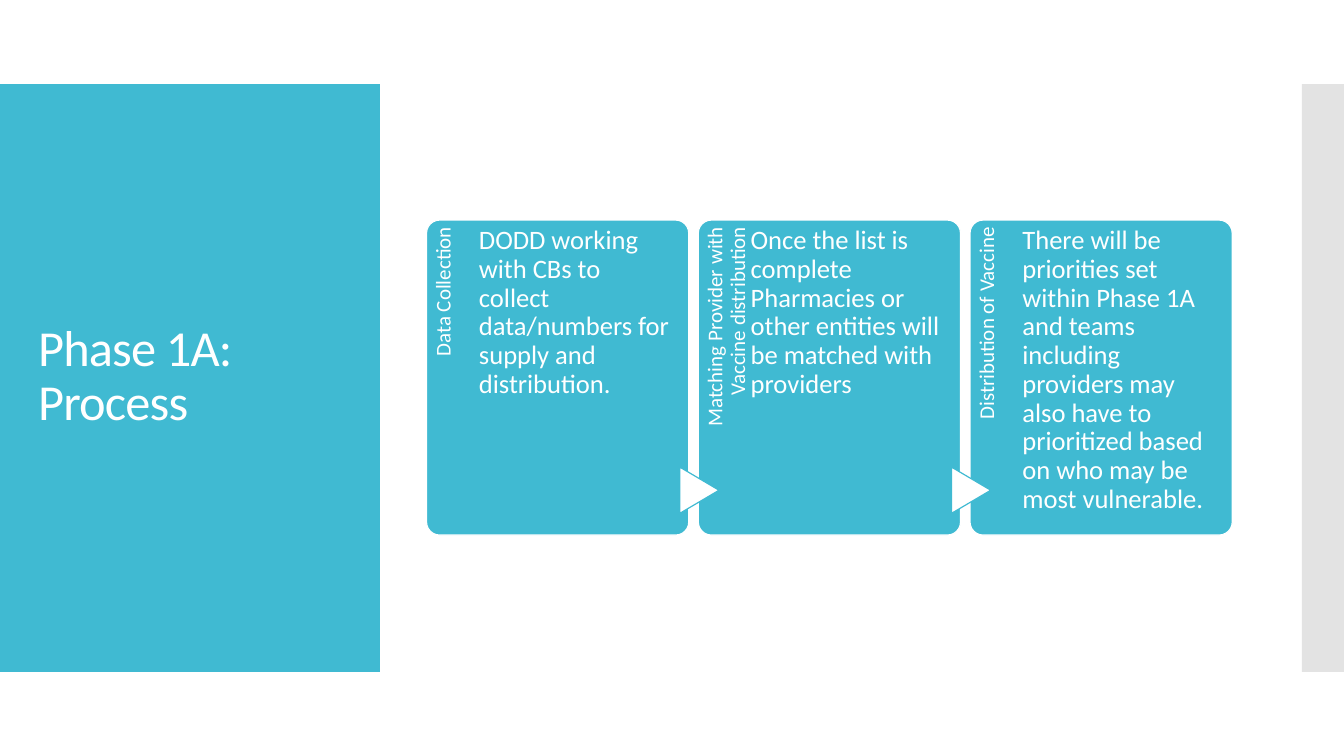
import pptx
import pptx.dml.color
import pptx.enum.shapes
import pptx.enum.text
import pptx.oxml.ns
import pptx.util
from lxml import etree

Pt = pptx.util.Pt
SHAPE = pptx.enum.shapes.MSO_SHAPE
ALIGN = pptx.enum.text.PP_ALIGN
ANCHOR = pptx.enum.text.MSO_ANCHOR
THEME = {
    "teal": pptx.dml.color.RGBColor.from_string("40BAD2"),
    "gray": pptx.dml.color.RGBColor.from_string("C8C8C8"),
    "white": pptx.dml.color.RGBColor.from_string("FFFFFF"),
    "font": "Calibri",
    "title": 36,
    "body": 19,
    "label": 15,
}


def add_filled(kind, left, top, width, height, fill, line=None):
    shape = page.shapes.add_shape(kind, Pt(left), Pt(top), Pt(width), Pt(height))
    shape.shadow.inherit = False
    shape.fill.solid()
    shape.fill.fore_color.rgb = THEME[fill]
    if line:
        shape.line.color.rgb = THEME[line]
        shape.line.width = Pt(0.85)
    else:
        shape.line.fill.background()
    return shape


def write_text(box, lines, size, margins, align=ALIGN.LEFT):
    frame = box.text_frame
    frame.word_wrap = True
    frame.auto_size = pptx.enum.text.MSO_AUTO_SIZE.NONE
    frame.margin_left, frame.margin_top, frame.margin_right, frame.margin_bottom = map(Pt, margins)
    para = frame.paragraphs[0]
    para.alignment = align
    para.line_spacing = 0.9
    for index, line in enumerate(lines):
        if index:
            para.add_line_break()
        span = para.add_run()
        span.text = line
        span.font.name = THEME["font"]
        span.font.size = Pt(THEME[size])
        span.font.color.rgb = THEME["white"]
    return frame


deck = pptx.Presentation()
deck.slide_width, deck.slide_height = Pt(960), Pt(540)
page = deck.slides.add_slide(deck.slide_layouts[5])

# Side panels, behind the title
title = page.shapes.title
title_panel = add_filled(SHAPE.RECTANGLE, 0, 60, 271.4, 420, "teal")
edge_panel = add_filled(SHAPE.RECTANGLE, 930, 60, 30, 420, "gray")
edge_color = edge_panel.fill._xPr.find(".//" + pptx.oxml.ns.qn("a:srgbClr"))
etree.SubElement(edge_color, pptx.oxml.ns.qn("a:alpha"), val="50000")
for panel in (title_panel, edge_panel):
    title.element.addprevious(panel.element)

# Title
title.left, title.top, title.width, title.height = Pt(20), Pt(88.5), Pt(232), Pt(362)
title_frame = write_text(title, ["Phase 1A:", "Process"], "title", (7.2, 3.6, 7.2, 3.6))
title_frame.vertical_anchor = ANCHOR.MIDDLE
for span in title_frame.paragraphs[0].runs:
    span.font._element.set("spc", "-60")

# Process cards, each with an upright label and an arrow from the card before
STEPS = [
    ("Data Collection",
     "DODD working with CBs to collect data/numbers for supply and distribution."),
    ("Matching Provider with Vaccine distribution",
     "Once the list is complete Pharmacies or other entities will be matched with providers"),
    ("Distribution of Vaccine",
     "There will be priorities set within Phase 1A and teams including providers may also "
     "have to prioritized based on who may be most vulnerable."),
]
CARD_LEFT, CARD_TOP, CARD_WIDTH, CARD_HEIGHT = 304.7, 157.2, 187.3, 225
CARD_STEP = 194.1
LABEL_LENGTH, LABEL_BAND = 184.3, 37.4
ARROW_WIDTH, ARROW_HEIGHT = 33, 28

for index, (label, body) in enumerate(STEPS):
    left = CARD_LEFT + index * CARD_STEP
    card = add_filled(SHAPE.ROUNDED_RECTANGLE, left, CARD_TOP, CARD_WIDTH, CARD_HEIGHT,
                      "teal", "white")
    card.adjustments[0] = 0.05

    label_box = page.shapes.add_textbox(
        Pt(left + (LABEL_BAND - LABEL_LENGTH) / 2),
        Pt(CARD_TOP + (LABEL_LENGTH - LABEL_BAND) / 2),
        Pt(LABEL_LENGTH), Pt(LABEL_BAND))
    label_box.rotation = 270
    write_text(label_box, [label], "label", (0, 4.3, 5, 0), ALIGN.RIGHT)

    if index:
        arrow = add_filled(SHAPE.FLOWCHART_EXTRACT, left - 15.7, 336.2,
                           ARROW_WIDTH, ARROW_HEIGHT, "white", "teal")
        arrow.rotation = 90

    body_box = page.shapes.add_textbox(Pt(left + LABEL_BAND), Pt(CARD_TOP),
                                       Pt(139.6), Pt(CARD_HEIGHT))
    write_text(body_box, [body], "body", (0, 4.8, 0, 0))

deck.save("out.pptx")
